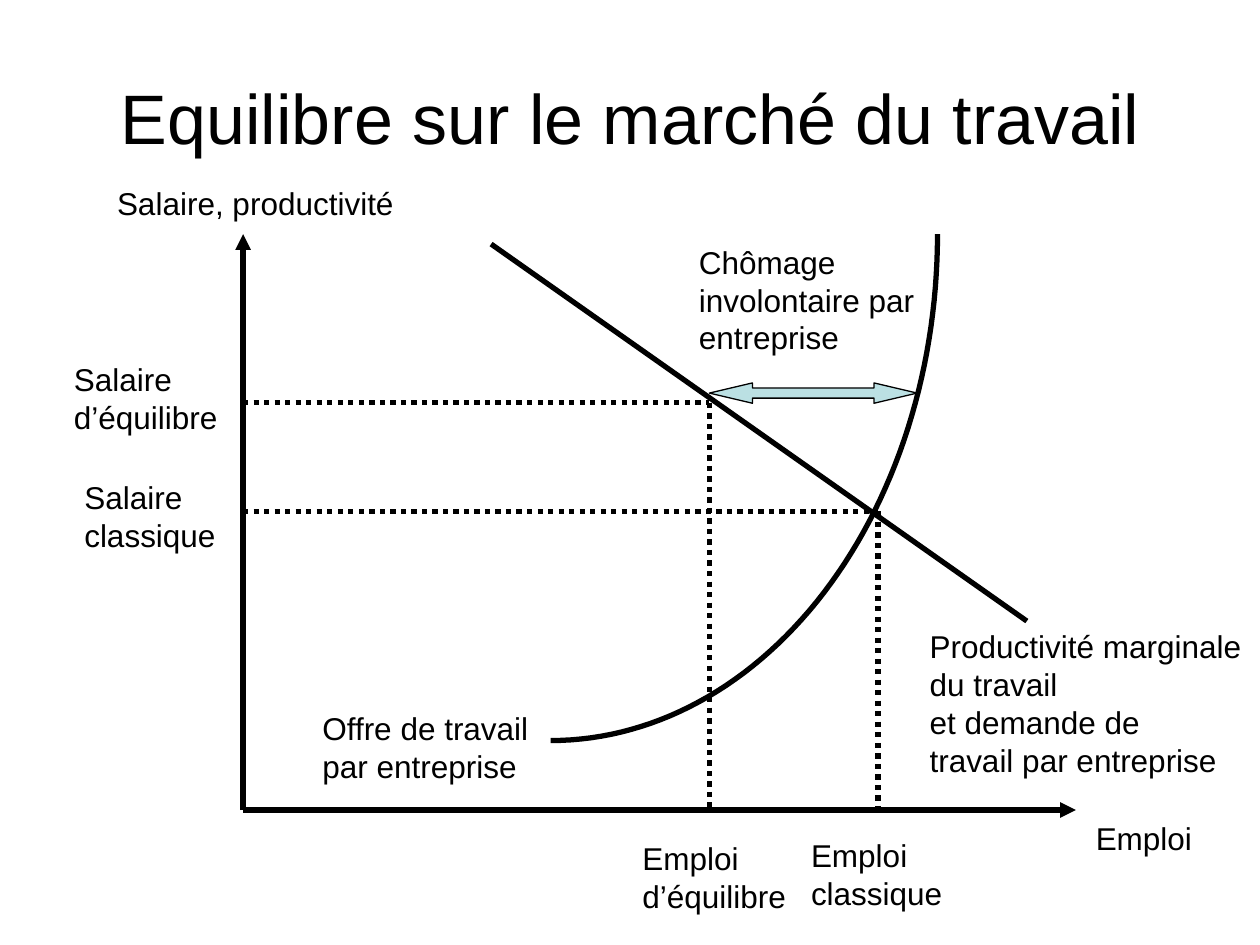
from math import cos, pi, sin

from pptx import Presentation
from pptx.dml.color import RGBColor
from pptx.enum.dml import MSO_LINE as Dash
from pptx.enum.shapes import MSO_CONNECTOR as Conn, MSO_SHAPE as Shape
from pptx.enum.text import MSO_ANCHOR as Anchor, MSO_AUTO_SIZE as Fit, PP_ALIGN as Align
from pptx.oxml.ns import qn
from pptx.util import Cm, Pt
from lxml.etree import SubElement

BLACK = RGBColor(0, 0, 0)
PALE = RGBColor(0xBB, 0xE0, 0xE3)
FONT = "Arial"

# Plot box and key points, in cm; points are relative to the box
PLOT = (4.9, 4.72, 16.79, 11.61)
FAIR = (9.4, 3.4)       # equilibrium with unemployment
CLASSIC = (12.8, 5.59)  # classical equilibrium

# Text, left, top, width
LABELS = [
    ("Salaire, productivité", -2.79, -1.14, 6.1),
    ("Salaire\nd’équilibre", -3.66, 2.41, 3.4),
    ("Salaire\nclassique", -3.45, 4.8, 3.15),
    ("Offre de travail\npar entreprise", 1.35, 9.45, 4.67),
    ("Productivité marginale\ndu travail\net demande de\ntravail par entreprise",
     13.59, 7.8, 6.78),
    ("Chômage\ninvolontaire par\nentreprise", 8.94, 0.05, 4.85),
    ("Emploi\nd’équilibre", 7.8, 12.07, 3.4),
    ("Emploi\nclassique", 11.2, 12.01, 3.15),
    ("Emploi", 16.94, 11.66, 2.46),
]


def style(frame, size):
    for para in frame.paragraphs:
        for run in para.runs:
            run.font.name, run.font.size = FONT, Pt(size)
            run.font.color.rgb = BLACK


def add_title(slide, left, top, width, height):
    title = slide.shapes.title
    title.left, title.top = Cm(left), Cm(top)
    title.width, title.height = Cm(width), Cm(height)
    frame = title.text_frame
    frame.text = "Equilibre sur le marché du travail"
    frame.vertical_anchor = Anchor.MIDDLE
    frame.paragraphs[0].alignment = Align.CENTER
    style(frame, 40)


def add_line(slide, box, start, end, dash=None, head=False):
    left, top = box[:2]
    line = slide.shapes.add_connector(
        Conn.STRAIGHT, Cm(left + start[0]), Cm(top + start[1]),
        Cm(left + end[0]), Cm(top + end[1]))
    line.line.color.rgb, line.line.width = BLACK, Pt(3)
    if dash:
        line.line.dash_style = dash
    props = line._element.spPr
    if head:
        SubElement(props.find(qn("a:ln")), qn("a:tailEnd"), type="triangle")
    SubElement(props, qn("a:effectLst"))


def add_curve(slide, box, start, wide, high, steps=60):
    """Quarter ellipse centred on start, from its lowest to its rightmost point."""
    left, top = box[0] + start[0], box[1] + start[1]
    turns = [pi / 2 * i / steps for i in range(steps + 1)]
    spots = [(Cm(left + wide * sin(t)), Cm(top + high * cos(t))) for t in turns]
    path = slide.shapes.build_freeform(*spots[0])
    path.add_line_segments(spots[1:], close=False)
    curve = path.convert_to_shape()
    curve.shadow.inherit = False
    curve.fill.background()
    curve.line.color.rgb, curve.line.width = BLACK, Pt(3)


def add_gap(slide, box, left, top, width, height):
    arrow = slide.shapes.add_shape(
        Shape.LEFT_RIGHT_ARROW, Cm(box[0] + left), Cm(box[1] + top),
        Cm(width), Cm(height))
    arrow.adjustments[0], arrow.adjustments[1] = 0.5, 2.12
    arrow.shadow.inherit = False
    arrow.fill.solid()
    arrow.fill.fore_color.rgb = PALE
    arrow.line.color.rgb, arrow.line.width = BLACK, Pt(0.75)


def add_label(slide, box, text, left, top, width):
    high = 0.25 + 0.76 * len(text.split("\n"))
    label = slide.shapes.add_textbox(
        Cm(box[0] + left), Cm(box[1] + top), Cm(width), Cm(high))
    frame = label.text_frame
    frame.text = text
    frame.word_wrap = True
    frame.margin_right = 0  # spare room, so that no line breaks early
    frame.auto_size = Fit.SHAPE_TO_FIT_TEXT
    style(frame, 18)


def add_plot(slide, box):
    wide, high = box[2:]
    # Axes
    for end in ((0, 0), (wide, high)):
        add_line(slide, box, (0, high), end, head=True)
    # Demand and supply
    add_line(slide, box, (5, 0.2), (15.8, 7.8))
    add_curve(slide, box, (6.2, 0), 7.8, high - 1.4)
    # Dotted guides to both axes
    for x, y in (FAIR, CLASSIC):
        add_line(slide, box, (0, y), (x, y), Dash.ROUND_DOT)
        add_line(slide, box, (x, y), (x, high), Dash.ROUND_DOT)
    # Unemployment gap
    add_gap(slide, box, FAIR[0], 3, 4.19, 0.41)
    for label in LABELS:
        add_label(slide, box, *label)


def main():
    deck = Presentation()
    deck.slide_width, deck.slide_height = Cm(25.4), Cm(19.05)
    slide = deck.slides.add_slide(deck.slide_layouts[5])
    add_title(slide, 1.27, 0.76, 22.86, 3.18)
    add_plot(slide, PLOT)
    deck.save("out.pptx")


if __name__ == "__main__":
    main()
